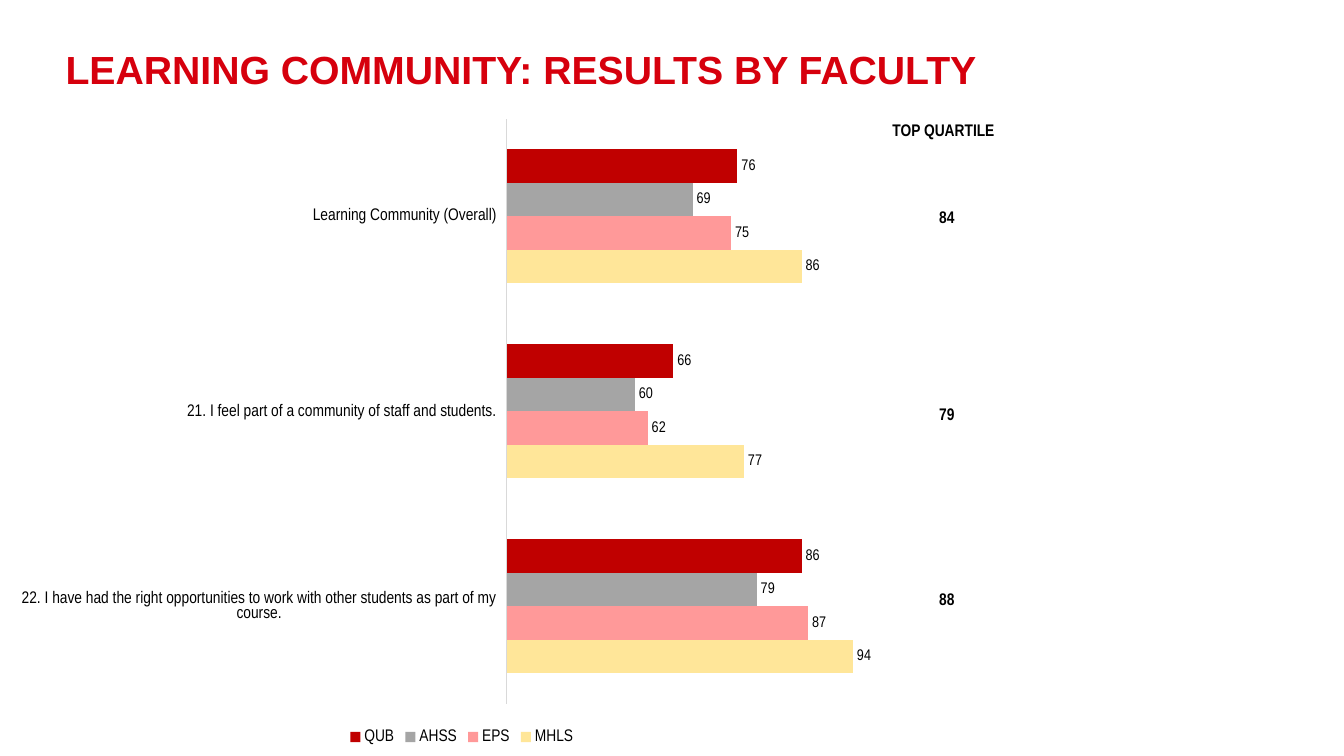
from dataclasses import dataclass

from pptx import Presentation
from pptx.chart.data import CategoryChartData
from pptx.dml.color import RGBColor
from pptx.enum.chart import (XL_CHART_TYPE, XL_LABEL_POSITION,
                             XL_LEGEND_POSITION, XL_TICK_LABEL_POSITION,
                             XL_TICK_MARK)
from pptx.enum.text import MSO_ANCHOR, MSO_AUTO_SIZE, PP_ALIGN
from pptx.oxml import parse_xml
from pptx.oxml.ns import nsdecls
from pptx.util import Inches, Pt


@dataclass(frozen=True)
class Theme:
    title_font: str = "Arial"
    font: str = "Arial Narrow"
    title_color: str = "D6000D"
    text_color: str = "000000"
    axis_color: str = "D9D9D9"
    title_size: int = 28
    text_size: int = 12
    value_size: int = 11


def format_font(font, name, size, color, bold=False):
    font.name, font.size, font.bold = name, Pt(size), bold
    font.color.rgb = RGBColor.from_string(color)


def write(tf, text, align=PP_ALIGN.LEFT, anchor=MSO_ANCHOR.TOP, wrap=True,
          auto_size=MSO_AUTO_SIZE.NONE, line_spacing=None, **font):
    tf.word_wrap, tf.vertical_anchor, tf.auto_size = wrap, anchor, auto_size
    p = tf.paragraphs[0]
    p.alignment, p.line_spacing = align, line_spacing
    r = p.add_run()
    r.text = text
    format_font(r.font, **font)


class SlideBuilder:
    """Lengths are percentages of the slide's width and height."""

    def __init__(self, prs, theme):
        self.prs, self.theme = prs, theme
        self.slide = prs.slides.add_slide(prs.slide_layouts[5])

    def box(self, x, y, w, h):
        width, height = self.prs.slide_width, self.prs.slide_height
        return [int(share * side / 100) for share, side in
                ((x, width), (y, height), (w, width), (h, height))]

    def title(self, text, *area):
        t, sp = self.theme, self.slide.shapes.title
        sp.left, sp.top, sp.width, sp.height = self.box(*area)
        write(sp.text_frame, text, line_spacing=0.9, name=t.title_font,
              size=t.title_size, color=t.title_color, bold=True)

    def label(self, text, center_x, center_y, w, h=4):
        t = self.theme
        area = self.box(center_x - w / 2, center_y - h / 2, w, h)
        sp = self.slide.shapes.add_textbox(*area)
        write(sp.text_frame, text, align=PP_ALIGN.CENTER, wrap=False,
              anchor=MSO_ANCHOR.MIDDLE, auto_size=MSO_AUTO_SIZE.SHAPE_TO_FIT_TEXT,
              name=t.font, size=t.text_size, color=t.text_color, bold=True)

    def bar_chart(self, categories, series, area, plot_area):
        t = self.theme
        data = CategoryChartData()
        data.categories = categories
        for name, _, values in series:
            data.add_series(name, values)
        chart = self.slide.shapes.add_chart(
            XL_CHART_TYPE.BAR_CLUSTERED, *self.box(*area), data).chart
        chart.has_title = False
        format_font(chart.font, t.font, t.text_size, t.text_color)

        # Bars and their values
        plot = chart.plots[0]
        plot.gap_width, plot.overlap, plot.vary_by_categories = 182, 0, False
        for bars, (_, color, _) in zip(plot.series, series):
            bars.format.fill.solid()
            bars.format.fill.fore_color.rgb = RGBColor.from_string(color)
            labels = bars.data_labels
            labels.show_value = True
            labels.position = XL_LABEL_POSITION.OUTSIDE_END
            format_font(labels.font, t.font, t.value_size, t.text_color)

        # Axes
        axis = chart.category_axis
        axis.major_tick_mark = axis.minor_tick_mark = XL_TICK_MARK.NONE
        axis.tick_label_position = XL_TICK_LABEL_POSITION.LOW
        axis.format.line.color.rgb = RGBColor.from_string(t.axis_color)
        axis.format.line.width = Pt(0.75)
        format_font(axis.tick_labels.font, t.font, t.text_size, t.text_color)
        scale = chart.value_axis
        scale.minimum_scale, scale.maximum_scale = 40, 100
        scale.has_major_gridlines = scale.visible = False

        # Legend
        chart.has_legend = True
        chart.legend.position = XL_LEGEND_POSITION.BOTTOM
        chart.legend.include_in_layout = False
        format_font(chart.legend.font, t.font, t.text_size, t.text_color)

        # Fixed plot area, in shares of the chart
        sizes = "".join(f'<c:{key} val="{share}"/>'
                        for key, share in zip("xywh", plot_area))
        layout = parse_xml(
            f'<c:layout {nsdecls("c")}><c:manualLayout>'
            '<c:layoutTarget val="inner"/><c:xMode val="edge"/>'
            f'<c:yMode val="edge"/>{sizes}</c:manualLayout></c:layout>')
        plot_el = chart.plots[0]._element.getparent()
        for old in plot_el.findall(layout.tag):
            plot_el.remove(old)
        plot_el.insert(0, layout)


CATEGORIES = [
    "22. I have had the right opportunities to work with other students "
    "as part of my course.",
    "21. I feel part of a community of staff and students.",
    "Learning Community (Overall)",
]
FACULTIES = [
    ("MHLS", "FFE699", (94, 77, 86)),
    ("EPS", "FF9999", (87, 62, 75)),
    ("AHSS", "A5A5A5", (79, 60, 69)),
    ("QUB", "C00000", (86, 66, 76)),
]
TOP_QUARTILE = [("84", 28.67), ("79", 54.8), ("88", 79.2)]


def main():
    prs = Presentation()
    prs.slide_width, prs.slide_height = Inches(13.33), Inches(7.5)
    s = SlideBuilder(prs, Theme())

    # Title
    s.title("LEARNING COMMUNITY: RESULTS BY FACULTY", 4.13, 6, 85.67, 14.53)

    # Results by faculty
    s.bar_chart(CATEGORIES, FACULTIES, area=(1.05, 14, 66.62, 85.07),
                plot_area=(0.55, 0.02, 0.43, 0.91))

    # Top quartile column
    s.label("TOP QUARTILE", 70.2, 17.2, w=9.23)
    for score, center_y in TOP_QUARTILE:
        s.label(score, 70.45, center_y, w=2.7)

    prs.save("out.pptx")


if __name__ == "__main__":
    main()
